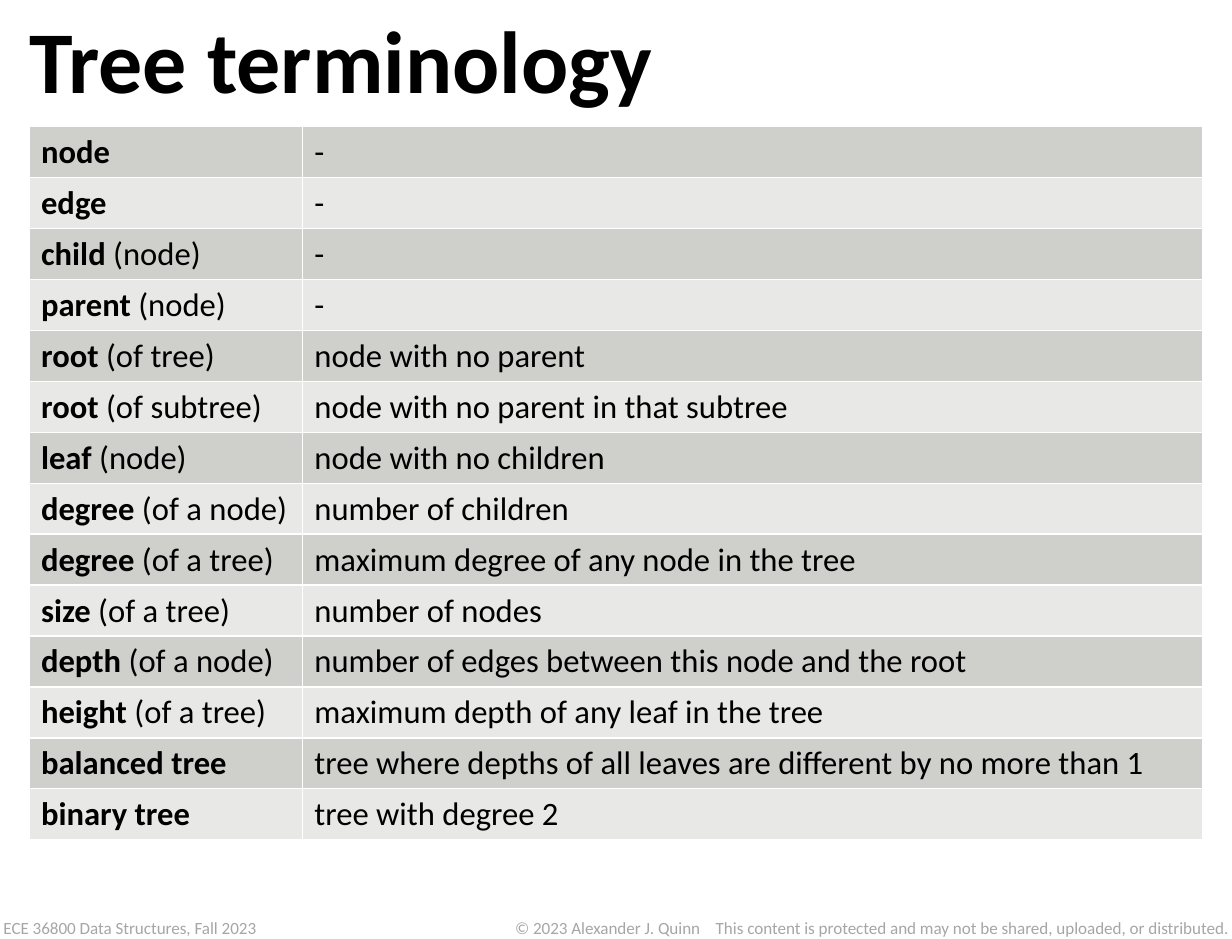
from lxml import etree
from pptx import Presentation
from pptx import util as u
from pptx.dml.color import RGBColor
from pptx.enum import text as t
from pptx.oxml import ns

FONT = "Calibri"
COLORS = {"ink": "000000", "foot": "A6A6A6", "dark": "CFD0CC",
          "light": "E8E9E7", "line": "FFFFFF"}
TERMS = [
    ("node", "", "-"),
    ("edge", "", "-"),
    ("child", " (node)", "-"),
    ("parent", " (node)", "-"),
    ("root", " (of tree)", "node with no parent"),
    ("root", " (of subtree)", "node with no parent in that subtree"),
    ("leaf", " (node)", "node with no children"),
    ("degree", " (of a node)", "number of children"),
    ("degree", " (of a tree)", "maximum degree of any node in the tree"),
    ("size", " (of a tree)", "number of nodes"),
    ("depth", " (of a node)", "number of edges between this node and the root"),
    ("height", " (of a tree)", "maximum depth of any leaf in the tree"),
    ("balanced tree", "",
     "tree where depths of all leaves are different by no more than 1"),
    ("binary tree", "", "tree with degree 2"),
]


def rgb(name):
    """Return the named colour."""
    return RGBColor.from_string(COLORS[name])


def add_run(para, words, size, color="ink", bold=False):
    """Append one styled run."""
    run = para.add_run()
    run.text = words
    font = run.font
    font.name, font.size, font.bold = FONT, u.Pt(size), bold
    font.color.rgb = rgb(color)


def add_box(slide, left, top, width, height):
    """Add a text box without margins and return its paragraph."""
    box = slide.shapes.add_textbox(*map(u.Inches, (left, top, width, height)))
    frame = box.text_frame
    frame.word_wrap = True
    frame.vertical_anchor = t.MSO_ANCHOR.TOP
    frame.margin_left = frame.margin_right = 0
    frame.margin_top = frame.margin_bottom = 0
    return frame.paragraphs[0]


def add_title(slide, left, top, width, height):
    """Place the slide heading."""
    para = add_box(slide, left, top, width, height)
    add_run(para, "Tree terminology", 54, bold=True)


def add_edges(cell):
    """Draw thin lines on all four sides of a cell."""
    props = cell._tc.get_or_add_tcPr()
    for spot, side in enumerate(("lnL", "lnR", "lnT", "lnB")):
        line = etree.Element(ns.qn(f"a:{side}"), w=str(u.Pt(1)))
        fill = etree.SubElement(line, ns.qn("a:solidFill"))
        etree.SubElement(fill, ns.qn("a:srgbClr"), val=COLORS["line"])
        props.insert(spot, line)


def add_terms(slide, left, top, width, height):
    """Place the table of terms and meanings."""
    frame = slide.shapes.add_table(
        len(TERMS), 2, *map(u.Inches, (left, top, width, height)))
    table = frame.table
    table.first_row = False
    first = 2.33
    table.columns[0].width = u.Inches(first)
    table.columns[1].width = u.Inches(width - first)
    for row, (term, note, sense) in enumerate(TERMS):
        parts = [(term, True), (note, False)], [(sense, False)]
        for col, runs in enumerate(parts):
            cell = table.cell(row, col)
            cell.fill.solid()
            cell.fill.fore_color.rgb = rgb("light" if row % 2 else "dark")
            add_edges(cell)
            for words, bold in runs:
                if words:
                    add_run(cell.text_frame.paragraphs[0], words, 20, bold=bold)


def add_footer(slide, left, top, width, height):
    """Place the course name and the rights notice."""
    course = add_box(slide, left, top, 3.47, height)
    add_run(course, "ECE 36800 Data Structures, Fall 2023", 10.5, "foot")
    shift = 4.36
    rights = add_box(slide, left + shift, top, width - shift, height)
    tabs = etree.SubElement(rights._p.get_or_add_pPr(), ns.qn("a:tabLst"))
    etree.SubElement(tabs, ns.qn("a:tab"), pos=str(u.Inches(1.71)), algn="l")
    add_run(rights, "© 2023 Alexander J. Quinn\tThis content is protected and "
            "may not be shared, uploaded, or distributed.", 10.5, "foot")


def main():
    """Build and save the slide."""
    deck = Presentation()
    deck.slide_width, deck.slide_height = u.Inches(10.5), u.Inches(8)
    slide = deck.slides.add_slide(deck.slide_layouts[6])
    add_footer(slide, 0.03, 7.82, 10.47, 0.18)
    add_title(slide, 0.25, 0.05, 10.25, 0.83)
    add_terms(slide, 0.25, 1.08, 10, 6.07)
    deck.save("out.pptx")


if __name__ == "__main__":
    main()
